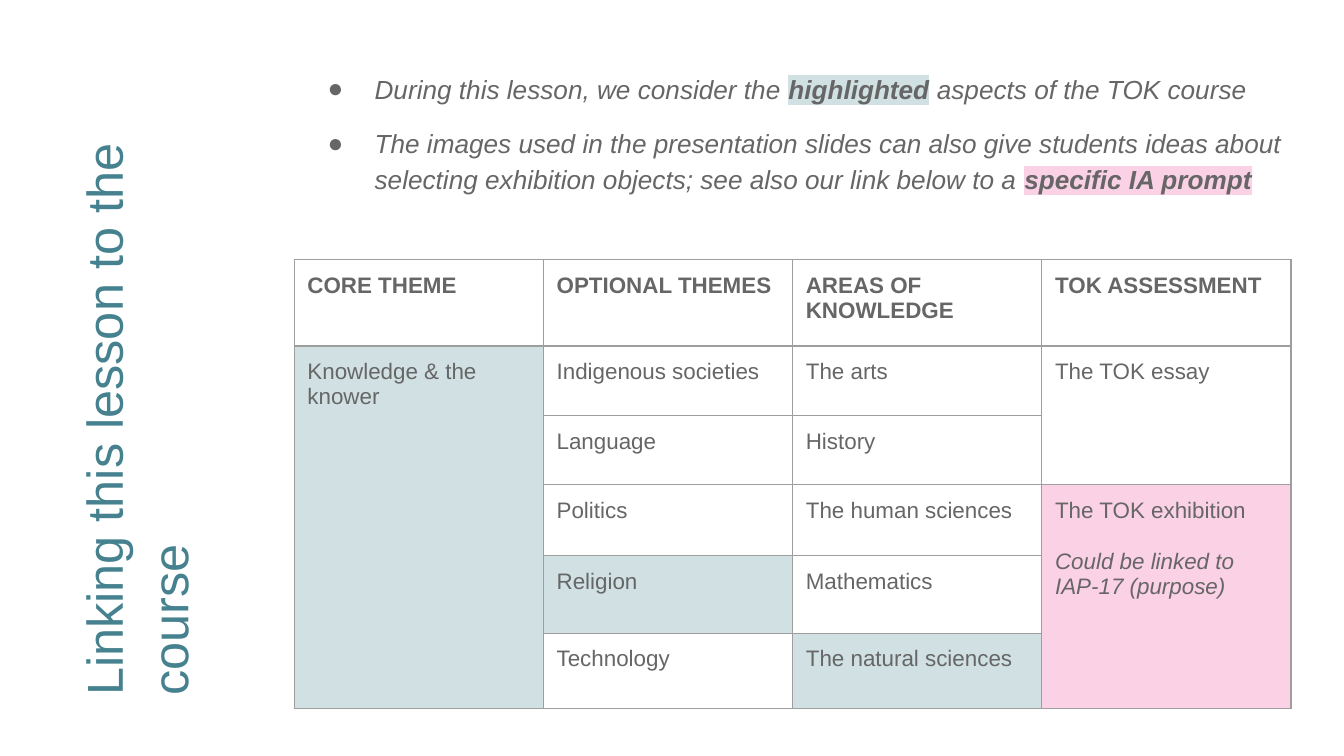
from lxml import etree
from pptx import Presentation
from pptx.dml.color import RGBColor
from pptx.enum.text import MSO_ANCHOR, MSO_AUTO_SIZE, PP_ALIGN
from pptx.oxml.ns import qn
from pptx.util import Cm, Pt

TOP, LEFT, NO_FIT = MSO_ANCHOR.TOP, PP_ALIGN.LEFT, MSO_AUTO_SIZE.NONE
FONT = "Arial"
TEAL = RGBColor(0x45, 0x81, 0x8E)
GREY = RGBColor(0x66, 0x66, 0x66)
BORDER = RGBColor(0x9E, 0x9E, 0x9E)
WHITE = RGBColor(0xFF, 0xFF, 0xFF)
BLUE = RGBColor(0xD0, 0xE0, 0xE3)
PINK = RGBColor(0xFB, 0xD1, 0xE6)
INSET = Cm(0.25)

# Content
TITLE = "Linking this lesson to the course"
# Each bullet is a list of (text, highlight)
BULLETS = [
    [("During this lesson, we consider the ", None), ("highlighted", BLUE),
     (" aspects of the TOK course", None)],
    [("The images used in the presentation slides can also give students ideas about "
      "selecting exhibition objects; see also our link below to a ", None),
     ("specific IA prompt", PINK)],
]
# Each column has a heading and its cells as (text, rows covered, fill)
COLUMNS = [
    ("CORE THEME", [("Knowledge & the knower", 5, BLUE)]),
    ("OPTIONAL THEMES", [
        ("Indigenous societies", 1, WHITE), ("Language", 1, WHITE),
        ("Politics", 1, WHITE), ("Religion", 1, BLUE), ("Technology", 1, WHITE)]),
    ("AREAS OF KNOWLEDGE", [
        ("The arts", 1, WHITE), ("History", 1, WHITE), ("The human sciences", 1, WHITE),
        ("Mathematics", 1, WHITE), ("The natural sciences", 1, BLUE)]),
    ("TOK ASSESSMENT", [
        ("The TOK essay", 2, WHITE),
        ("The TOK exhibition\nCould be linked to IAP-17 (purpose)", 3, PINK)]),
]
COLUMN_WIDTH = Cm(4.71)
ROW_HEIGHTS = [Cm(h) for h in (1.63, 1.32, 1.3, 1.34, 1.47, 1.42)]


def style(span, size, colour, bold=False, italic=False):
    font = span.font
    font.name, font.size, font.bold, font.italic = FONT, Pt(size), bold, italic
    font.color.rgb = colour


def add_colour(parent, tag, colour):
    element = etree.SubElement(parent, qn(tag))
    etree.SubElement(element, qn("a:srgbClr"), val=str(colour))
    return element


def highlight(span, colour):
    properties = span.font._element
    mark = add_colour(properties, "a:highlight", colour)
    properties.find(qn("a:solidFill")).addnext(mark)


def add_bullet(para):
    properties = para._p.get_or_add_pPr()
    properties.set("marL", str(Cm(1.27)))
    properties.set("indent", str(-Cm(0.89)))
    add_colour(properties, "a:buClr", GREY)
    etree.SubElement(properties, qn("a:buFont"), typeface=FONT)
    etree.SubElement(properties, qn("a:buChar"), char="●")


def add_borders(cell):
    properties = cell._tc.get_or_add_tcPr()
    for place, side in enumerate(("a:lnL", "a:lnR", "a:lnT", "a:lnB")):
        line = etree.Element(qn(side), w=str(Pt(0.75)))
        add_colour(line, "a:solidFill", BORDER)
        properties.insert(place, line)


def place_text(shape, left, top, width, height):
    shape.left, shape.top, shape.width, shape.height = left, top, width, height
    frame = shape.text_frame
    frame.word_wrap, frame.auto_size, frame.vertical_anchor = True, NO_FIT, TOP
    frame.margin_left = frame.margin_right = INSET
    frame.margin_top = frame.margin_bottom = INSET
    return frame


def fill_cell(cell, text, bold=False):
    cell.margin_left = cell.margin_right = INSET
    cell.margin_top = cell.margin_bottom = INSET
    cell.vertical_anchor = TOP
    cell.text_frame.text = text
    for number, para in enumerate(cell.text_frame.paragraphs):
        if number:
            para.space_before = Pt(13.8)
        for span in para.runs:
            style(span, 12, GREY, bold=bold, italic=number > 0)


deck = Presentation()
deck.slide_width, deck.slide_height = Cm(25.4), Cm(14.29)
page = deck.slides.add_slide(deck.slide_layouts[1])

# Vertical title
title = page.shapes.title
frame = place_text(title, Cm(-3.35), Cm(5.41), Cm(12.37), Cm(3.61))
title.rotation = 270
frame.text = TITLE
frame.paragraphs[0].alignment = LEFT
frame.paragraphs[0].line_spacing = 1.08
style(frame.paragraphs[0].runs[0], 27, TEAL)

# Bulleted introduction
frame = place_text(page.placeholders[1], Cm(5.56), Cm(1.04), Cm(18.97), Cm(3.1))
for number, parts in enumerate(BULLETS):
    para = frame.add_paragraph() if number else frame.paragraphs[0]
    para.line_spacing = 1.15
    para.space_before = para.space_after = Pt(10 if number else 0)
    add_bullet(para)
    for text, mark in parts:
        span = para.add_run()
        span.text = text
        style(span, 14, GREY, bold=mark is not None, italic=True)
        if mark is not None:
            highlight(span, mark)

# Course table
table = page.shapes.add_table(
    len(ROW_HEIGHTS), len(COLUMNS), Cm(5.56), Cm(4.91),
    COLUMN_WIDTH * len(COLUMNS), sum(ROW_HEIGHTS)).table
table.first_row = table.horz_banding = False
for row, height in zip(table.rows, ROW_HEIGHTS):
    row.height = height
for column, (heading, cells) in enumerate(COLUMNS):
    table.columns[column].width = COLUMN_WIDTH
    row = 0
    for text, covered, colour in [(heading, 1, WHITE)] + cells:
        first = table.cell(row, column)
        for offset in range(covered):
            cell = table.cell(row + offset, column)
            cell.fill.solid()
            cell.fill.fore_color.rgb = colour
            add_borders(cell)
        if covered > 1:
            first.merge(table.cell(row + covered - 1, column))
        fill_cell(first, text, bold=row == 0)
        row += covered

deck.save("out.pptx")
